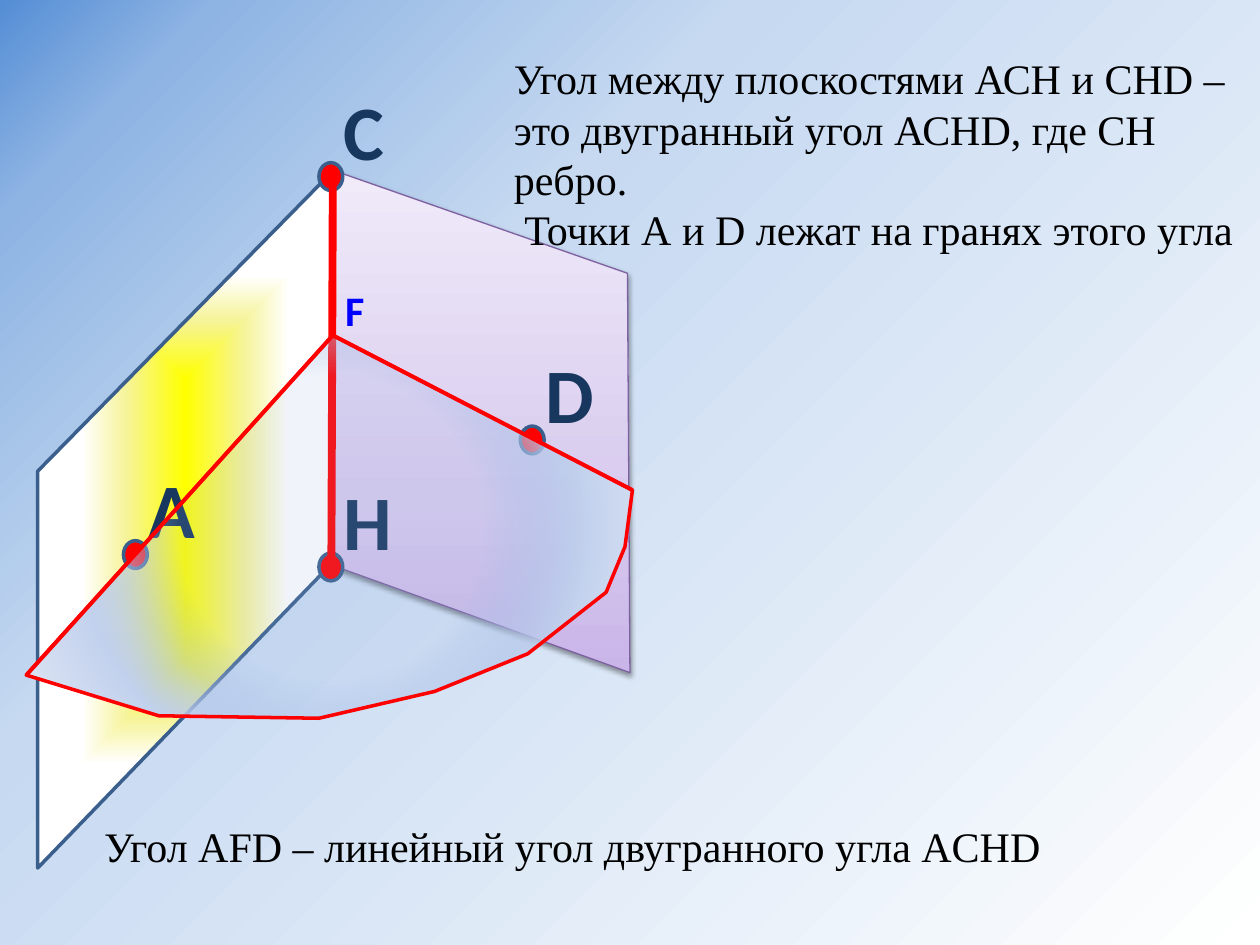
"""Build a slide on the linear angle AFD of the dihedral angle ACHD."""
from lxml.etree import SubElement
from pptx import Presentation
from pptx.dml.color import RGBColor
from pptx.enum.shapes import MSO_CONNECTOR as CONNECTOR, MSO_SHAPE as SHAPE
from pptx.oxml import parse_xml
from pptx.oxml.ns import nsdecls, qn
from pptx.util import Cm, Pt

SKY = RGBColor(0x55, 0x8E, 0xD5)
SKY_LIGHT = RGBColor(0x8E, 0xB4, 0xE3)
SKY_PALE = RGBColor(0xC6, 0xD9, 0xF1)
WHITE = RGBColor(0xFF, 0xFF, 0xFF)
YELLOW = RGBColor(0xFF, 0xFF, 0x00)
YELLOW_PALE = RGBColor(0xF6, 0xF4, 0x9A)
LILAC = RGBColor(0xC9, 0xB5, 0xE8)
LILAC_LIGHT = RGBColor(0xD8, 0xCB, 0xEE)
LILAC_PALE = RGBColor(0xF0, 0xEA, 0xF9)
SECTOR = RGBColor(0x9A, 0xB5, 0xE4)
SECTOR_LIGHT = RGBColor(0xC2, 0xD1, 0xED)
SECTOR_PALE = RGBColor(0xE1, 0xE8, 0xF5)
STEEL = RGBColor(0x3A, 0x5F, 0x8C)
PURPLE = RGBColor(0x7D, 0x60, 0xA0)
RED = RGBColor(0xFF, 0x00, 0x00)
BLUE = RGBColor(0x00, 0x00, 0xFF)
NAVY = RGBColor(0x17, 0x37, 0x5E)
BLACK = RGBColor(0x00, 0x00, 0x00)

CENTRE = '<a:fillToRect l="50000" t="50000" r="50000" b="50000"/>'
CORNER_CIRCLE = '<a:path path="circle"><a:fillToRect r="100000" b="100000"/></a:path>'
CENTRE_CIRCLE = f'<a:path path="circle">{CENTRE}</a:path>'
CENTRE_SHAPE = f'<a:path path="shape">{CENTRE}</a:path>'
UPWARD = '<a:lin ang="16200000" scaled="0"/>'

LABEL_FORMAT = {"name": "Calibri", "size": Pt(44), "bold": True}
VERTEX_FORMAT = {"name": "Calibri", "size": Pt(24), "bold": True}
BODY_FORMAT = {"name": "Times New Roman", "size": Pt(24)}


def apply_gradient(fill, element, stops, direction):
    fill.solid()
    solid = element.xpath(".//a:solidFill")[0]
    stop_xml = "".join(
        f'<a:gs pos="{position * 1000}"><a:srgbClr val="{color}">'
        f'<a:alpha val="{opacity * 1000}"/></a:srgbClr></a:gs>'
        for position, color, opacity in stops)
    gradient = parse_xml(
        f'<a:gradFill {nsdecls("a")} rotWithShape="1"><a:gsLst>{stop_xml}</a:gsLst>'
        f'{direction}</a:gradFill>')
    solid.getparent().replace(solid, gradient)


def add_text(shapes, box, paragraphs, font_format, color, wrap=True):
    text_box = shapes.add_textbox(*map(Cm, box))
    frame = text_box.text_frame
    frame.word_wrap = wrap
    frame.text = "\n".join(paragraphs)
    for paragraph in frame.paragraphs:
        for name, value in font_format.items():
            setattr(paragraph.font, name, value)
        paragraph.font.color.rgb = color


presentation = Presentation()
presentation.slide_width, presentation.slide_height = Cm(25.4), Cm(19.05)
slide = presentation.slides.add_slide(presentation.slide_layouts[6])
apply_gradient(
    slide.background.fill, slide._element,
    [(0, SKY, 100), (10, SKY_LIGHT, 100), (34, SKY_PALE, 100), (100, WHITE, 100)],
    CORNER_CIRCLE)

faces_group = slide.shapes.add_group_shape()
angle_group = slide.shapes.add_group_shape()
vertex_c, vertex_f, vertex_h = (6.71, 3.45), (6.71, 6.76), (6.68, 11.38)
left_end, right_end = (0.53, 13.61), (12.75, 9.88)

outlines = [
    (faces_group, [vertex_c, (0.76, 9.5), (0.76, 17.5), (6.65, 11.4)],
     [(0, YELLOW, 100), (40, YELLOW_PALE, 100), (70, WHITE, 100), (100, WHITE, 100)],
     CENTRE_SHAPE, STEEL, 2, False),
    (faces_group, [(6.76, 3.45), (12.65, 5.51), (12.7, 13.56), (6.71, 11.4)],
     [(0, LILAC, 100), (35, LILAC_LIGHT, 100), (100, LILAC_PALE, 100)],
     UPWARD, PURPLE, 0.75, True),
    (angle_group,
     [left_end, vertex_f, right_end, (12.6, 11.02), (12.22, 11.94), (10.64, 13.18),
      (8.76, 13.94), (6.43, 14.48), (3.2, 14.43)],
     [(42, SECTOR, 14), (71, SECTOR_LIGHT, 100), (100, SECTOR_PALE, 100)],
     CENTRE_CIRCLE, RED, 2, False),
]
for group, points, stops, direction, line_color, width, shadowed in outlines:
    corners = [(Cm(x), Cm(y)) for x, y in points]
    builder = group.shapes.build_freeform(*corners[0], scale=1.0)
    builder.add_line_segments(corners[1:], close=True)
    shape = builder.convert_to_shape()
    apply_gradient(shape.fill, shape._element, stops, direction)
    shape.line.color.rgb = line_color
    shape.line.width = Pt(width)
    shape.shadow.inherit = False
    if shadowed:
        effects = shape._element.spPr.find(qn("a:effectLst"))
        effects.append(parse_xml(
            f'<a:outerShdw {nsdecls("a")} blurRad="{Pt(3.1)}" dist="{Pt(1.6)}" '
            'dir="5400000" rotWithShape="0"><a:srgbClr val="000000">'
            '<a:alpha val="38000"/></a:srgbClr></a:outerShdw>'))

labelled_points = [("A", 2.49, 10.9, 1.47), ("D", 10.49, 8.59, 1.5),
                   ("C", 6.43, 3.28, 1.35), ("H", 6.43, 11.15, 1.5)]
for letter, left, top, label_width in labelled_points:
    group = slide.shapes.add_group_shape()
    dot = group.shapes.add_shape(SHAPE.OVAL, Cm(left), Cm(top), Cm(0.48), Cm(0.56))
    dot.shadow.inherit = False
    dot.fill.solid()
    dot.fill.fore_color.rgb = RED
    dot.line.color.rgb = STEEL
    dot.line.width = Pt(2)
    add_text(group.shapes, (left + 0.25, top - 1.73, label_width, 2.13), [letter],
             LABEL_FORMAT, NAVY, wrap=False)

segments = [(slide, vertex_c, vertex_h, 4.5),
            (angle_group, vertex_f, right_end, 2.25),
            (angle_group, vertex_f, left_end, 2.25)]
for parent, start, end, width in segments:
    connector = parent.shapes.add_connector(CONNECTOR.STRAIGHT, *map(Cm, start + end))
    connector.line.color.rgb = RED
    connector.line.width = Pt(width)
    SubElement(connector._element.spPr, qn("a:effectLst"))
slide.shapes._spTree.append(angle_group._element)

texts = [
    ((10.11, 0.94, 15.29, 4.37),
     ["Угол между плоскостями АСН и СНD – это двугранный угол АСНD, где СН ребро.",
      " Точки А и D лежат на гранях этого угла"], BODY_FORMAT, BLACK),
    ((6.71, 5.61, 1.27, 1.27), ["F"], VERTEX_FORMAT, BLUE),
    ((1.85, 16.41, 23.04, 1.27),
     ["Угол AFD – линейный угол двугранного угла АCHD"], BODY_FORMAT, BLACK),
]
for box, paragraphs, font_format, color in texts:
    add_text(slide.shapes, box, paragraphs, font_format, color)

presentation.save("out.pptx")
